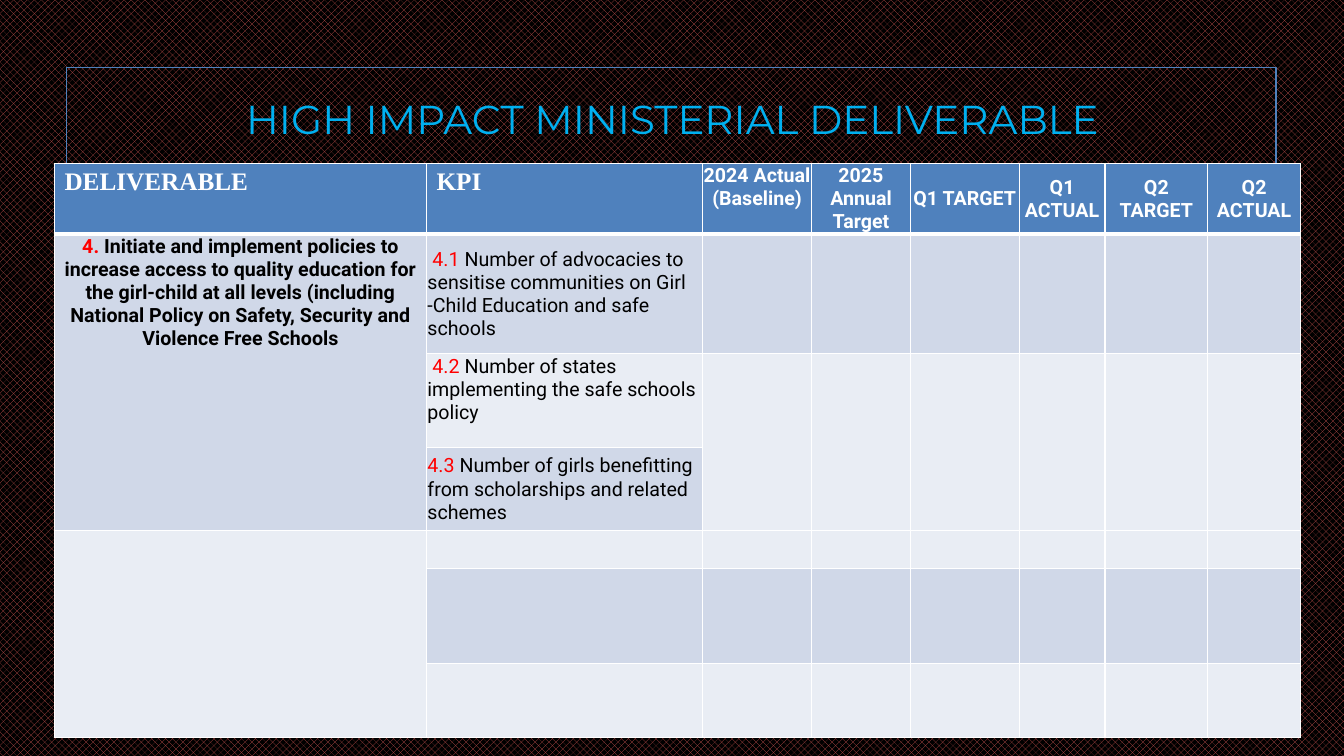
from lxml import etree
from pptx import Presentation
from pptx.dml.color import RGBColor
from pptx.enum.dml import MSO_PATTERN
from pptx.enum.shapes import MSO_SHAPE
from pptx.enum.text import MSO_ANCHOR, PP_ALIGN
from pptx.oxml.ns import qn
from pptx.util import Inches, Pt

PERCENT_50 = MSO_PATTERN.PERCENT_50
RECTANGLE = MSO_SHAPE.RECTANGLE
TOP, MIDDLE = MSO_ANCHOR.TOP, MSO_ANCHOR.MIDDLE
LEFT, CENTER = PP_ALIGN.LEFT, PP_ALIGN.CENTER

COLORS = {
    "black": "000000", "white": "FFFFFF", "red": "FF0000", "pattern": "C0504D",
    "title": "00B0F0", "blue": "4F81BD", "band_dark": "D0D8E8", "band_light": "E9EDF4",
}
COL_WIDTHS = [3.69, 2.74, 1.08, 0.98, 1.08, 0.85, 1.02, 0.92]
ROW_HEIGHTS = [0.7, 1.19, 0.93, 0.82, 0.38, 0.94, 0.74]
MAIN_HEADERS = ["DELIVERABLE", "KPI"]
PERIOD_HEADERS = [
    ("2024 Actual (Baseline)", TOP), ("2025 Annual Target", TOP),
    ("Q1 TARGET", MIDDLE), ("Q1 ACTUAL", MIDDLE),
    ("Q2 TARGET", MIDDLE), ("Q2 ACTUAL", MIDDLE),
]
DELIVERABLE = (
    "4. ",
    "Initiate and implement policies to increase access to quality education for the "
    "girl-child at all levels (including National Policy on Safety, Security and "
    "Violence Free Schools",
)
KPIS = [
    (" 4.1 ", "Number of advocacies to sensitise communities on Girl -Child Education "
              "and safe schools", MIDDLE),
    (" 4.2 ", "Number of states implementing the safe schools policy", TOP),
    ("4.3", " Number of girls benefitting from scholarships and related schemes", MIDDLE),
]


def rgb(name):
    return RGBColor.from_string(COLORS[name])


def set_background(slide):
    fill = slide.background.fill
    fill.patterned()
    fill.pattern = PERCENT_50
    fill.fore_color.rgb = rgb("pattern")
    fill.back_color.rgb = rgb("black")


def add_frame(slide):
    sp = slide.shapes.add_shape(RECTANGLE, Inches(0.66), Inches(0.67), Inches(12), Inches(6.17))
    sp.shadow.inherit = False
    sp.fill.background()
    sp.line.color.rgb = rgb("blue")
    sp.line.width = Pt(1.25)


def add_run(p, text, color, size=14, font="Roboto", bold=False):
    r = p.add_run()
    r.text = text
    r.font.size = Pt(size)
    r.font.name = font
    r.font.bold = bold
    r.font.color.rgb = rgb(color)


def set_title(slide):
    title = slide.shapes.title
    title.left, title.top = Inches(1.42), Inches(0.73)
    title.width, title.height = Inches(10.5), Inches(0.89)
    tf = title.text_frame
    tf.word_wrap = True
    tf.vertical_anchor = MIDDLE
    p = tf.paragraphs[0]
    p.alignment = CENTER
    add_run(p, "HIGH IMPACT MINISTERIAL DELIVERABLE", "title", 28.8, "Montserrat")


def set_borders(cell, bottom):
    tc_pr = cell._tc.get_or_add_tcPr()
    for side, width in (("L", 1), ("R", 1), ("T", 1), ("B", bottom)):
        ln = etree.SubElement(tc_pr, qn(f"a:ln{side}"), w=str(Pt(width)))
        fill = etree.SubElement(ln, qn("a:solidFill"))
        etree.SubElement(fill, qn("a:srgbClr"), val=COLORS["white"])


def style_cell(cell, fill, bottom=1):
    set_borders(cell, bottom)
    cell.fill.solid()
    cell.fill.fore_color.rgb = rgb(fill)
    cell.margin_left = cell.margin_right = cell.margin_top = Inches(0.01)
    cell.margin_bottom = 0


def write_cell(cell, runs, anchor=TOP, align=LEFT, **font):
    """Fill a cell with (text, colour) runs in one paragraph."""
    cell.vertical_anchor = anchor
    p = cell.text_frame.paragraphs[0]
    p.alignment = align
    for text, color in runs:
        add_run(p, text, color, **font)


def add_grid(slide):
    """Add the banded table with its merged cells, still without text."""
    table = slide.shapes.add_table(
        len(ROW_HEIGHTS), len(COL_WIDTHS), Inches(0.54), Inches(1.62),
        Inches(sum(COL_WIDTHS)), Inches(sum(ROW_HEIGHTS))).table
    for column, width in zip(table.columns, COL_WIDTHS):
        column.width = Inches(width)
    for i, (row, height) in enumerate(zip(table.rows, ROW_HEIGHTS)):
        row.height = Inches(height)
        for cell in row.cells:
            if i == 0:
                style_cell(cell, "blue", bottom=3)
            else:
                style_cell(cell, "band_dark" if i % 2 else "band_light")
    for first, last in ((1, 3), (4, 6)):
        table.cell(first, 0).merge(table.cell(last, 0))
    for col in range(2, len(COL_WIDTHS)):
        table.cell(2, col).merge(table.cell(3, col))
    return table


def fill_table(table):
    for col, text in enumerate(MAIN_HEADERS):
        cell = table.cell(0, col)
        cell.margin_left = cell.margin_right = Inches(0.1)
        cell.margin_top = cell.margin_bottom = Inches(0.05)
        write_cell(cell, [(text, "white")], size=18, font="Times New Roman", bold=True)
    for col, (text, anchor) in enumerate(PERIOD_HEADERS, len(MAIN_HEADERS)):
        write_cell(table.cell(0, col), [(text, "white")], anchor, CENTER, bold=True)
    number, text = DELIVERABLE
    write_cell(table.cell(1, 0), [(number, "red"), (text, "black")], TOP, CENTER, bold=True)
    for row, (number, text, anchor) in enumerate(KPIS, 1):
        write_cell(table.cell(row, 1), [(number, "red"), (text, "black")], anchor)


def main():
    prs = Presentation()
    prs.slide_width, prs.slide_height = Inches(13.33), Inches(7.5)
    slide = prs.slides.add_slide(prs.slide_layouts[5])
    set_background(slide)
    set_title(slide)
    add_frame(slide)
    fill_table(add_grid(slide))
    prs.save("out.pptx")


if __name__ == "__main__":
    main()
